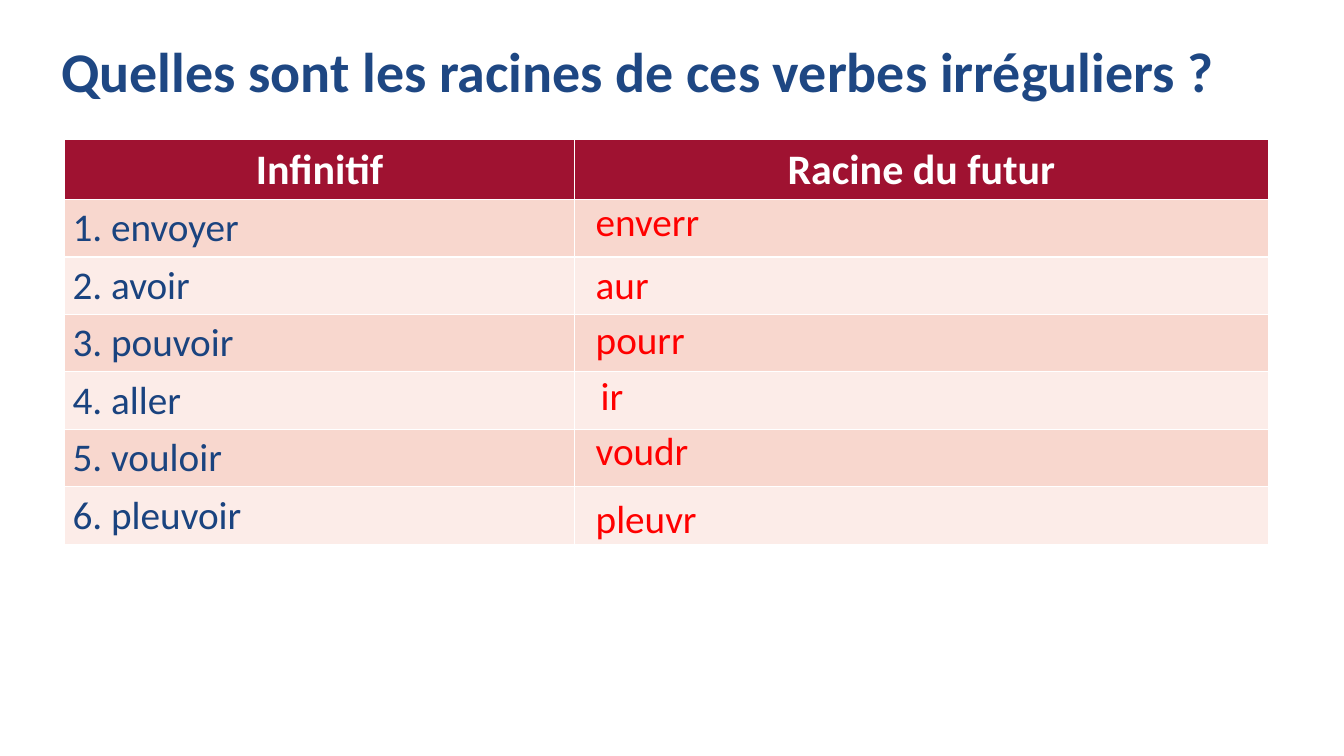
"""Build a slide on the irregular future stems of six French verbs."""
from pptx import Presentation
from pptx.dml.color import RGBColor
from pptx.enum.text import MSO_ANCHOR, PP_ALIGN
from pptx.util import Inches, Pt

COLORS = {
    "title": "1E4783",
    "verb": "1A437F",
    "stem": "FF0000",
    "header": "9F1231",
    "header_text": "FFFFFF",
    "odd_row": "F8D7CE",
    "even_row": "FCECE8",
}
HEADINGS = ["Infinitif", "Racine du futur"]
VERBS = ["envoyer", "avoir", "pouvoir", "aller", "vouloir", "pleuvoir"]
STEMS = [
    ("enverr", 5.81, 1.91, 1.04),
    ("aur", 5.81, 2.53, 0.57),
    ("pourr", 5.81, 3.08, 0.57),
    ("ir", 5.86, 3.63, 0.57),
    ("voudr", 5.81, 4.18, 0.57),
    ("pleuvr", 5.81, 4.85, 0.57),
]


def write(frame, text, size, color, bold=False):
    frame.text = text
    font = frame.paragraphs[0].runs[0].font
    font.name = "Calibri"
    font.size = Pt(size)
    font.bold = bold
    font.color.rgb = RGBColor.from_string(COLORS[color])


def add_text(text, left, top, width, height, size, color, bold=False):
    box = slide.shapes.add_textbox(Inches(left), Inches(top), Inches(width), Inches(height))
    box.text_frame.word_wrap = True
    write(box.text_frame, text, size, color, bold)
    return box.text_frame


prs = Presentation()
prs.slide_width = Inches(13.33)
prs.slide_height = Inches(7.5)
slide = prs.slides.add_slide(prs.slide_layouts[6])

title = add_text("Quelles sont les racines de ces verbes irréguliers ?",
                 0.51, 0.4, 12.07, 0.68, 40, "title", bold=True)
title.vertical_anchor = MSO_ANCHOR.MIDDLE
title.paragraphs[0].line_spacing = 0.9

verb_table = slide.shapes.add_table(
    len(VERBS) + 1, len(HEADINGS),
    Inches(0.64), Inches(1.38), Inches(11.94), Inches(4)).table
for column, width in zip(verb_table.columns, (5.06, 6.88)):
    column.width = Inches(width)

for row_index, row in enumerate(verb_table.rows):
    row.height = Inches(0.57 if row_index else 0.59)
    if row_index == 0:
        row_fill = "header"
    else:
        row_fill = "odd_row" if row_index % 2 else "even_row"
    for cell in row.cells:
        cell.margin_left = cell.margin_right = Inches(0.08)
        cell.fill.solid()
        cell.fill.fore_color.rgb = RGBColor.from_string(COLORS[row_fill])

for column_index, heading in enumerate(HEADINGS):
    header_frame = verb_table.cell(0, column_index).text_frame
    write(header_frame, heading, 30, "header_text", bold=True)
    header_frame.paragraphs[0].alignment = PP_ALIGN.CENTER

for number, verb in enumerate(VERBS, start=1):
    write(verb_table.cell(number, 0).text_frame, f"{number}. {verb}", 28, "verb")

for stem, left, top, height in STEMS:
    add_text(stem, left, top, 6.42, height, 28, "stem")

prs.save("out.pptx")
